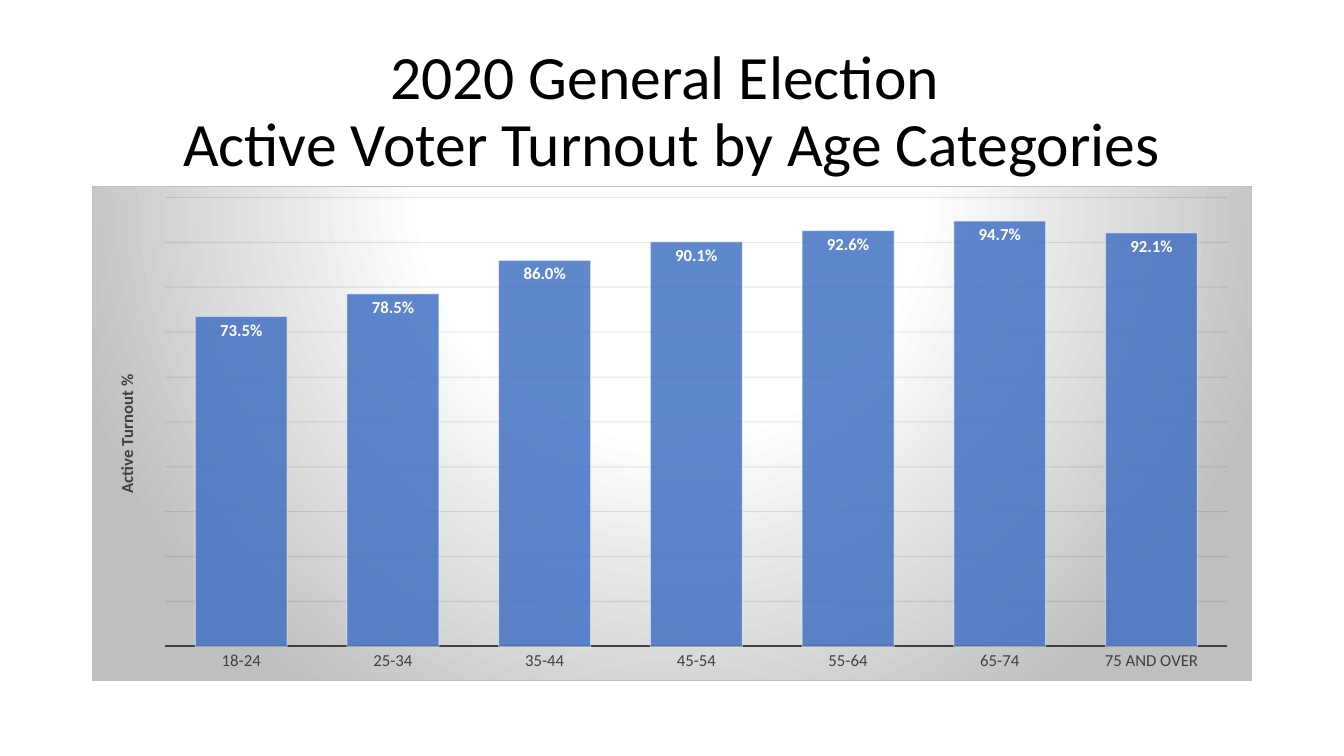
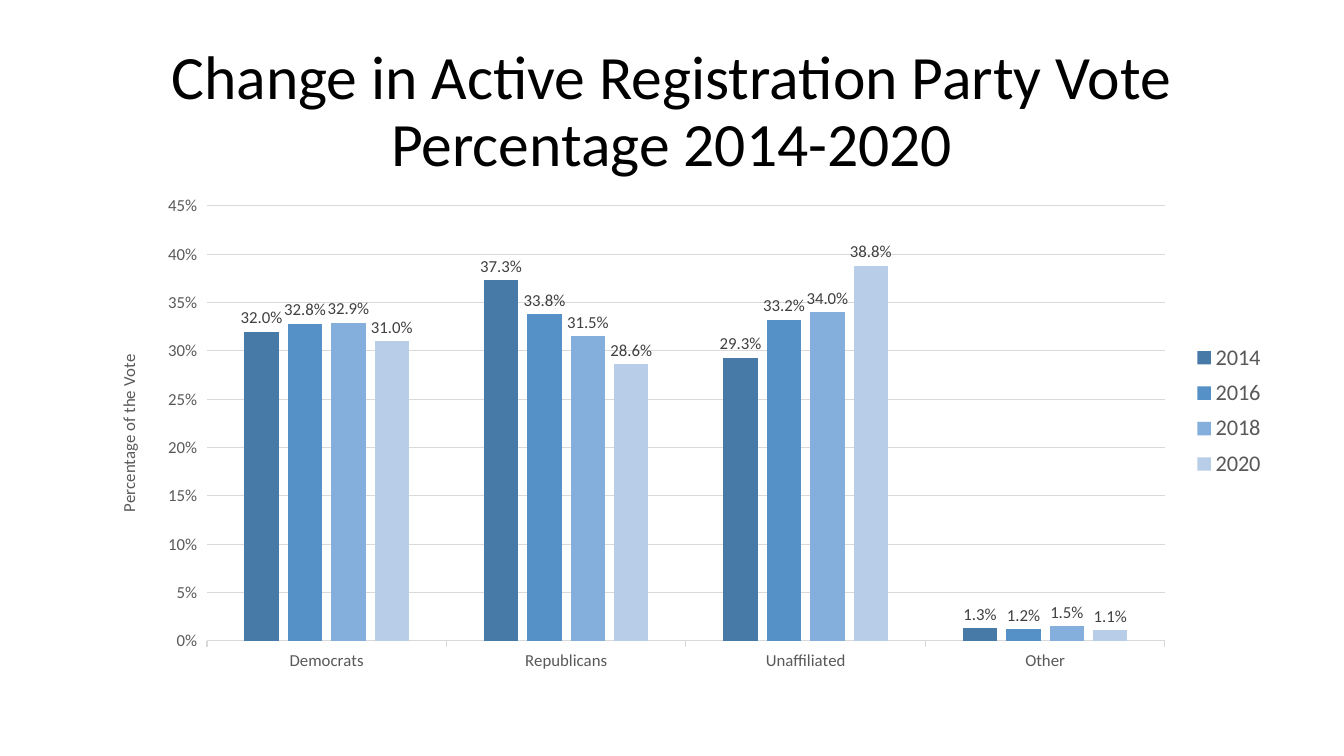
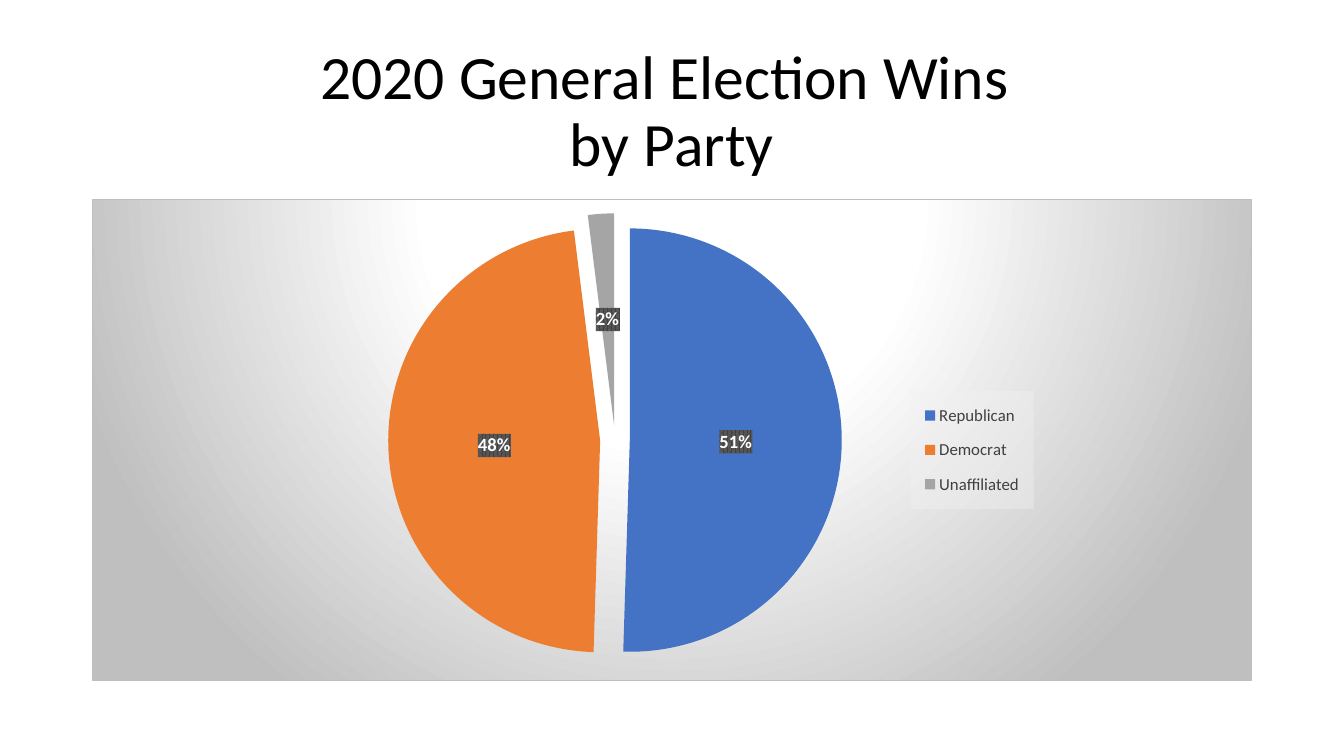
import pptx
import pptx.chart.data
import pptx.dml.color
import pptx.enum.chart
import pptx.enum.text
import pptx.oxml
import pptx.oxml.ns
import pptx.util
from dataclasses import dataclass

qn = pptx.oxml.ns.qn
Kind = pptx.enum.chart.XL_CHART_TYPE
LabelSpot = pptx.enum.chart.XL_LABEL_POSITION
TickMark = pptx.enum.chart.XL_TICK_MARK


@dataclass(frozen=True)
class Theme:
    font: str = "Calibri"
    black: str = "000000"
    white: str = "FFFFFF"
    ink: str = "404040"
    muted: str = "595959"
    rule: str = "D9D9D9"
    faint: str = "0D0D0D"
    silver: str = "BFBFBF"
    legend_fill: str = "F2F2F2"
    blue: str = "4472C4"
    orange: str = "ED7D31"
    gray: str = "A5A5A5"
    title_size: float = 44
    base_size: float = 10
    axis_size: float = 12
    slice_size: float = 13.3
    legend_size: float = 16


THEME = Theme()
SLIDE_SIZE = (1344, 756)
EMU_PER_PX = 12192000 / SLIDE_SIZE[0]
TITLE_BOX = (92, 40, 1160, 146)

# Boxes are (left, top, width, height) in slide px.
TURNOUT = {
    "title": "2020 General Election \nActive Voter Turnout by Age Categories",
    "kind": Kind.COLUMN_CLUSTERED,
    "box": (92, 186, 1160, 495),
    "plot": (165, 197, 1063, 450),
    "categories": ["18-24", "25-34", "35-44", "45-54", "55-64", "65-74", "75 AND OVER"],
    "series": [("Series 1", THEME.blue, [0.735, 0.785, 0.86, 0.901, 0.926, 0.947, 0.921])],
    "labels": {"format": "0.0%", "spot": LabelSpot.INSIDE_END,
               "font": {"size": THEME.axis_size, "color": THEME.white, "bold": True}},
}
REGISTRATION = {
    "title": "Change in Active Registration Party Vote Percentage 2014-2020",
    "kind": Kind.COLUMN_CLUSTERED,
    "box": (92, 186, 1182, 495),
    "plot": (207, 206, 958, 435),
    "legend": (1190, 336, 78, 150),
    "categories": ["Democrats", "Republicans", "Unaffiliated", "Other"],
    "series": [
        ("2014", "487AA8", [0.32, 0.373, 0.293, 0.013]),
        ("2016", "5591C7", [0.328, 0.338, 0.332, 0.012]),
        ("2018", "84AEDC", [0.329, 0.315, 0.34, 0.015]),
        ("2020", "B8CDE8", [0.31, 0.286, 0.388, 0.011]),
    ],
    "labels": {"format": "0.0%", "spot": LabelSpot.OUTSIDE_END,
               "font": {"size": THEME.axis_size, "color": THEME.ink}},
}
WINS = {
    "title": "2020 General Election Wins \nby Party",
    "kind": Kind.PIE,
    "box": (92, 199, 1160, 482),
    "plot": (388, 213, 454, 454),
    "legend": (911, 391, 123, 118),
    "categories": ["Republican", "Democrat", "Unaffiliated"],
    "series": [("Series 1", None, [51, 48, 2])],
    "slices": [THEME.blue, THEME.orange, THEME.gray],
    "labels": {"format": '0"%"', "spot": LabelSpot.CENTER,
               "font": {"size": THEME.slice_size, "color": THEME.white, "bold": True}},
}


def px(length):
    return pptx.util.Emu(round(length * EMU_PER_PX))


def rgb(color):
    return pptx.dml.color.RGBColor.from_string(color)


def set_font(font, size, color, bold=False):
    font.name = THEME.font
    font.size = pptx.util.Pt(size)
    font.bold = bold
    font.color.rgb = rgb(color)


def set_line(line, color, width):
    line.color.rgb = rgb(color)
    line.width = pptx.util.Pt(width)


def add_text(page, text, box, size, color):
    frame = page.shapes.add_textbox(*map(px, box)).text_frame
    frame.word_wrap = True
    frame.vertical_anchor = pptx.enum.text.MSO_ANCHOR.MIDDLE
    para = frame.paragraphs[0]
    para.alignment = pptx.enum.text.PP_ALIGN.CENTER
    para.line_spacing = 0.9
    for index, line in enumerate(text.split("\n")):
        if index:
            para.add_line_break()
        span = para.add_run()
        span.text = line
        set_font(span.font, size, color)


def add_element(parent, tag, **attributes):
    child = parent.makeelement(qn(tag), attributes)
    parent.append(child)
    return child


def fade(element, *percents):
    """Give each plain colour inside element its opacity, in order."""
    for color, percent in zip(list(element.iter(qn("a:srgbClr"))), percents):
        add_element(color, "a:alpha", val=str(percent * 1000))


def color_xml(color):
    return f'<a:srgbClr val="{color}"/>'


def add_panel(element, paint):
    """Put a background behind a chart part that already has text properties."""
    namespaces = pptx.oxml.ns.nsdecls("c", "a")
    panel = pptx.oxml.parse_xml(f"<c:spPr {namespaces}>{paint}</c:spPr>")
    element.find(qn("c:txPr")).addprevious(panel)
    return panel


def add_spotlight(chart):
    stops = "".join(
        f'<a:gs pos="{position * 1000}">{color_xml(color)}</a:gs>'
        for position, color in [(0, THEME.white), (39, THEME.white), (100, THEME.silver)])
    add_panel(chart.element, (
        f'<a:gradFill><a:gsLst>{stops}</a:gsLst><a:path path="circle">'
        '<a:fillToRect l="50000" t="-80000" r="50000" b="180000"/></a:path></a:gradFill>'
        f'<a:ln w="9525"><a:solidFill>{color_xml(THEME.silver)}</a:solidFill></a:ln>'))


def place(part, index, box, chart_box, inner=False):
    """Fix a chart part at box, given as fractions of the chart."""
    layout = part.find(qn("c:layout"))
    if layout is None:
        layout = part.makeelement(qn("c:layout"), {})
        part.insert(index, layout)
    manual = add_element(layout, "c:manualLayout")
    if inner:
        add_element(manual, "c:layoutTarget", val="inner")
    for side in "xy":
        add_element(manual, f"c:{side}Mode", val="edge")
    left, top, width, height = chart_box
    shares = ((box[0] - left) / width, (box[1] - top) / height, box[2] / width, box[3] / height)
    for name, share in zip("xywh", shares):
        add_element(manual, f"c:{name}", val=f"{share:.4f}")


def add_legend(chart, content, size, color):
    chart.has_legend = True
    legend = chart.legend
    legend.position = pptx.enum.chart.XL_LEGEND_POSITION.RIGHT
    legend.include_in_layout = False
    set_font(legend.font, size, color)
    element = chart.element.find(".//" + qn("c:legend"))
    place(element, 1, content["legend"], content["box"])
    return element


def add_chart(page, content):
    data = pptx.chart.data.CategoryChartData()
    data.categories = content["categories"]
    for name, _, values in content["series"]:
        data.add_series(name, values)
    chart = page.shapes.add_chart(content["kind"], *map(px, content["box"]), data).chart
    chart.has_title = False
    chart.has_legend = False
    set_font(chart.font, THEME.base_size, THEME.black)
    place(chart.element.find(".//" + qn("c:plotArea")), 0, content["plot"], content["box"], inner=True)
    style = content["labels"]
    for series, (_, color, _) in zip(chart.plots[0].series, content["series"]):
        if color:
            series.format.fill.solid()
            series.format.fill.fore_color.rgb = rgb(color)
        labels = series.data_labels
        labels.show_value = True
        labels.number_format = style["format"]
        labels.number_format_is_linked = False
        labels.position = style["spot"]
        set_font(labels.font, **style["font"])
    return chart


def style_columns(chart, gap, overlap, top, step, grid, baseline, tick, axis_color):
    plot = chart.plots[0]
    plot.vary_by_categories = False
    plot.gap_width = gap
    plot.overlap = overlap
    values, categories = chart.value_axis, chart.category_axis
    values.minimum_scale, values.maximum_scale, values.major_unit = 0, top, step
    values.has_major_gridlines = True
    set_line(values.major_gridlines.format.line, grid, 0.75)
    values.format.line.fill.background()
    values.tick_labels.number_format = "0%"
    values.tick_labels.number_format_is_linked = False
    set_line(categories.format.line, *baseline)
    categories.major_tick_mark = tick
    for axis in (values, categories):
        set_font(axis.tick_labels.font, THEME.axis_size, axis_color)


def add_value_title(chart, text, color, bold=False):
    frame = chart.value_axis.axis_title.text_frame
    frame.text = text
    set_font(frame.paragraphs[0].runs[0].font, THEME.axis_size, color, bold)
    body = chart.element.find(".//" + qn("c:valAx")).find(".//" + qn("a:bodyPr"))
    body.set("rot", "-5400000")
    body.set("vert", "horz")


def finish_turnout(chart):
    style_columns(chart, gap=65, overlap=0, top=1, step=0.1, grid=THEME.faint,
                  baseline=(THEME.ink, 1.5), tick=TickMark.NONE, axis_color=THEME.ink)
    add_value_title(chart, "Active Turnout %", THEME.ink, bold=True)
    chart.value_axis.visible = False
    set_line(chart.plots[0].series[0].format.line, THEME.white, 0.75)
    fade(chart.element.find(".//" + qn("c:majorGridlines")), 10)
    fade(chart.element.find(".//" + qn("c:ser")).find(qn("c:spPr")), 85, 50)
    add_spotlight(chart)


def finish_registration(chart):
    style_columns(chart, gap=219, overlap=-27, top=0.45, step=0.05, grid=THEME.rule,
                  baseline=(THEME.rule, 0.75), tick=TickMark.OUTSIDE, axis_color=THEME.muted)
    add_value_title(chart, "Percentage of the Vote", THEME.muted)
    add_legend(chart, REGISTRATION, THEME.legend_size, THEME.muted)


def finish_wins(chart):
    series = chart.plots[0].series[0]
    for index, color in enumerate(WINS["slices"]):
        fill = series.points[index].format.fill
        fill.solid()
        fill.fore_color.rgb = rgb(color)
    first_slice = chart.element.find(".//" + qn("c:dPt"))
    first_slice.addprevious(first_slice.makeelement(qn("c:explosion"), {"val": "7"}))
    add_panel(chart.element.find(".//" + qn("c:dLbls")), (
        f'<a:pattFill prst="pct75"><a:fgClr>{color_xml(THEME.ink)}</a:fgClr>'
        f'<a:bgClr>{color_xml(THEME.muted)}</a:bgClr></a:pattFill>'))
    legend = add_legend(chart, WINS, THEME.axis_size, THEME.ink)
    fade(add_panel(legend, f"<a:solidFill>{color_xml(THEME.legend_fill)}</a:solidFill>"), 39)
    add_spotlight(chart)


def main():
    deck = pptx.Presentation()
    deck.slide_width, deck.slide_height = map(px, SLIDE_SIZE)
    finishes = [(TURNOUT, finish_turnout), (REGISTRATION, finish_registration), (WINS, finish_wins)]
    for content, finish in finishes:
        page = deck.slides.add_slide(deck.slide_layouts[6])
        add_text(page, content["title"], TITLE_BOX, size=THEME.title_size, color=THEME.black)
        finish(add_chart(page, content))
    deck.save("out.pptx")


if __name__ == "__main__":
    main()
